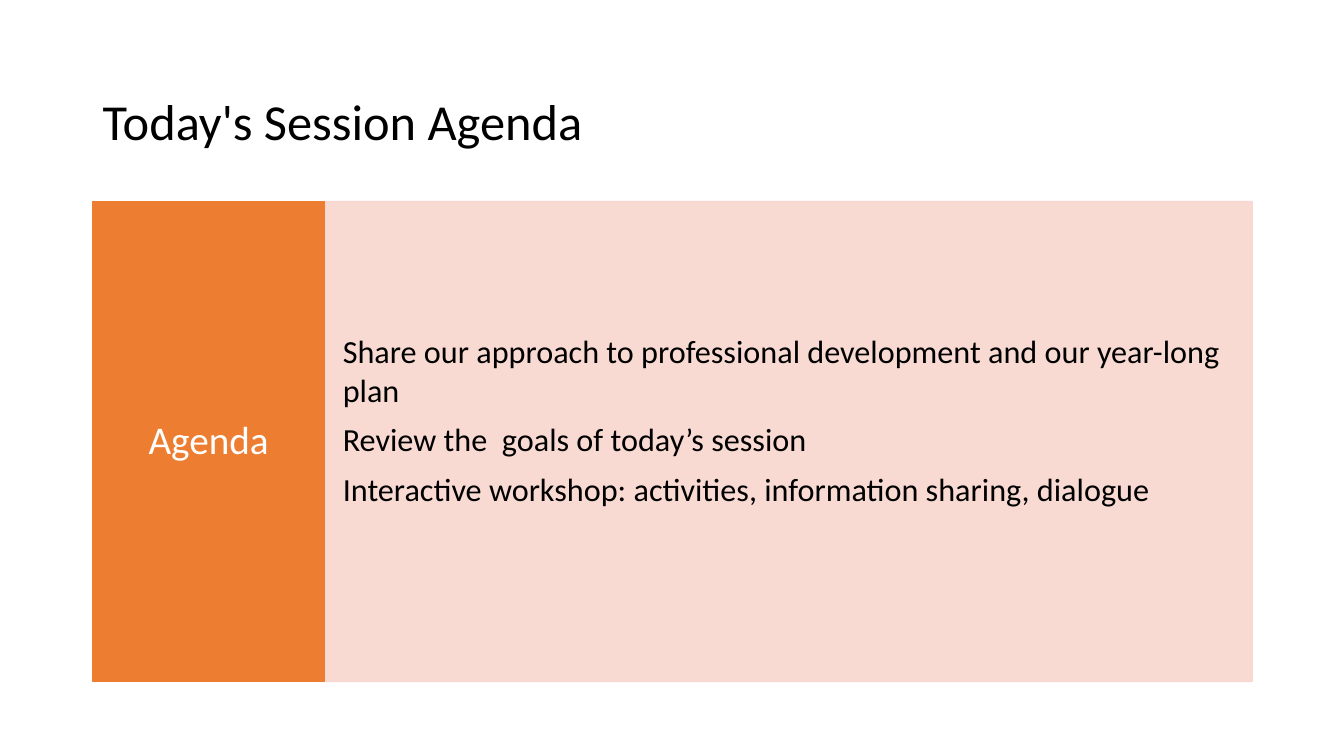
from dataclasses import dataclass

from lxml.etree import SubElement
from pptx import Presentation
from pptx.dml.color import RGBColor
from pptx.enum.shapes import MSO_SHAPE
from pptx.enum.text import MSO_ANCHOR, PP_ALIGN
from pptx.oxml.ns import qn
from pptx.util import Inches, Pt


@dataclass(frozen=True)
class Theme:
    """Colours and type sizes of the slide."""
    font: str = "Calibri"
    text: str = "000000"
    label_text: str = "FFFFFF"
    label_fill: str = "ED7D31"
    panel_fill: str = "F8D7CE"
    panel_opacity: int = 90
    title_size: int = 36
    label_size: int = 28
    body_size: int = 23


THEME = Theme()
AGENDA_ITEMS = [
    "Share our approach to professional development and our year-long plan",
    "Review the  goals of today’s session",
    "Interactive workshop: activities, information sharing, dialogue",
]


def write_text(shape, lines, *, size, color=THEME.text, align=PP_ALIGN.LEFT,
               line_spacing=1.0, space_after=0, insets=(0.1, 0.05, 0.1, 0.05)):
    """Fill a shape with vertically centred paragraphs."""
    frame = shape.text_frame
    frame.word_wrap = True
    frame.vertical_anchor = MSO_ANCHOR.MIDDLE
    (frame.margin_left, frame.margin_top,
     frame.margin_right, frame.margin_bottom) = map(Inches, insets)
    for index, line in enumerate(lines):
        paragraph = frame.add_paragraph() if index else frame.paragraphs[0]
        paragraph.alignment = align
        paragraph.line_spacing = line_spacing
        paragraph.space_after = Pt(space_after)
        run = paragraph.add_run()
        run.text = line
        run.font.name = THEME.font
        run.font.size = Pt(size)
        run.font.color.rgb = RGBColor.from_string(color)


def add_panel(slide, box, color, opacity=100):
    """Add a rectangle whose fill and outline share one colour."""
    shape = slide.shapes.add_shape(MSO_SHAPE.RECTANGLE, *map(Inches, box))
    shape.shadow.inherit = False
    shape.fill.solid()
    shape.line.width = Pt(1)
    for paint in (shape.fill.fore_color, shape.line.color):
        paint.rgb = RGBColor.from_string(color)
    if opacity < 100:
        for element in shape.element.spPr.iter(qn("a:srgbClr")):
            SubElement(element, qn("a:alpha"), val=str(opacity * 1000))
    return shape


def add_title(slide, box, title):
    """Place the slide title in the box."""
    shape = slide.shapes.add_textbox(*map(Inches, box))
    write_text(shape, [title], size=THEME.title_size, line_spacing=0.9)


def add_agenda(slide, box, label, items):
    """Split the box into a label column and a panel of agenda items."""
    left, top, width, height = box
    label_width = width / 5
    items_panel = add_panel(
        slide, (left + label_width, top, width - label_width, height),
        THEME.panel_fill, THEME.panel_opacity)
    write_text(items_panel, items, size=THEME.body_size, space_after=8,
               insets=(0.18, 1.21, 0.18, 1.64))
    label_panel = add_panel(slide, (left, top, label_width, height), THEME.label_fill)
    write_text(label_panel, [label], size=THEME.label_size, color=THEME.label_text,
               align=PP_ALIGN.CENTER, line_spacing=0.9,
               insets=(0.12, 0.47, 0.12, 0.47))


def main():
    """Build and save the agenda slide."""
    presentation = Presentation()
    presentation.slide_width = Inches(13.33)
    presentation.slide_height = Inches(7.5)
    slide = presentation.slides.add_slide(presentation.slide_layouts[6])
    add_title(slide, (0.92, 0.61, 11.5, 1.24), "Today's Session Agenda")
    add_agenda(slide, (0.92, 2, 11.5, 4.76), "Agenda", AGENDA_ITEMS)
    presentation.save("out.pptx")


if __name__ == "__main__":
    main()
